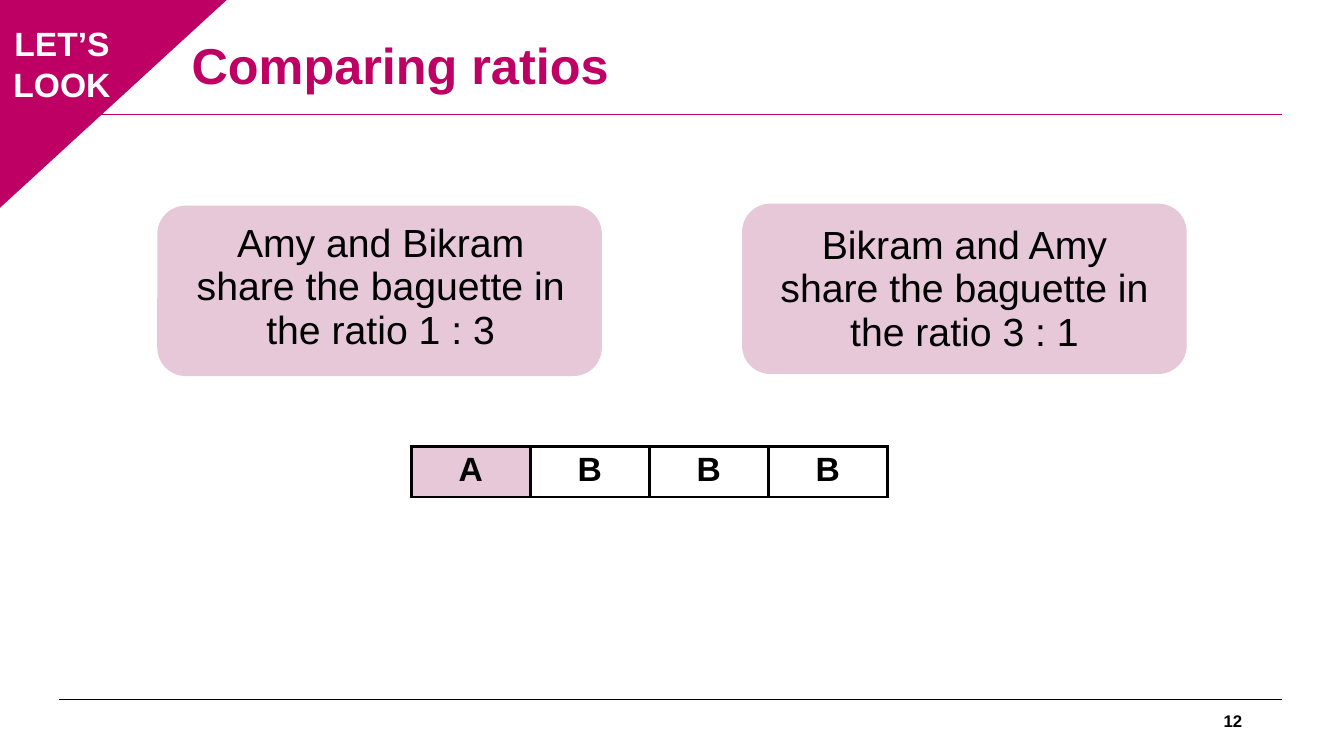
from lxml import etree
from pptx import Presentation
from pptx.dml.color import RGBColor
from pptx.enum.shapes import MSO_CONNECTOR, MSO_SHAPE
from pptx.enum.text import MSO_ANCHOR, PP_ALIGN
from pptx.oxml.ns import qn
from pptx.util import Pt

LEFT, CENTER, RIGHT = PP_ALIGN.LEFT, PP_ALIGN.CENTER, PP_ALIGN.RIGHT
TOP, MIDDLE = MSO_ANCHOR.TOP, MSO_ANCHOR.MIDDLE
ROUNDED, TRIANGLE = MSO_SHAPE.ROUNDED_RECTANGLE, MSO_SHAPE.ISOSCELES_TRIANGLE
STRAIGHT = MSO_CONNECTOR.STRAIGHT

# Content: lengths in px, 100 px to the inch
PX = 9144
FONT = "Arial"
COLORS = {"magenta": "BE0064", "pink": "E6C8D9", "black": "000000", "white": "FFFFFF"}
TITLE = "Comparing ratios"
CORNER_LABEL = ["LET’S", "LOOK"]
PAGE_NUMBER = "12"
RULES = [(694, "black"), (114, "magenta")]
RULE_LEFT, RULE_RIGHT = 59, 1272
# Card text, card left and top, text left and top
CARDS = [
    ("Bikram and Amy share the baguette in the ratio 3 : 1", (736, 202), (757, 217)),
    ("Amy and Bikram share the baguette in the ratio 1 : 3", (156, 204), (178, 215)),
]
CARD_SIZE = (441, 169)
CARD_TEXT_SIZE = (399, 150)
BAR_PARTS = ["A", "B", "B", "B"]
BAR_LEFT, BAR_TOP, PART_WIDTH, BAR_HEIGHT = 408, 443, 118, 47


def px(*lengths):
    return [length * PX for length in lengths]


def color(name):
    return RGBColor.from_string(COLORS[name])


def write(frame, lines, size, color_name, bold=False, align=CENTER, spacing=None, anchor=TOP):
    frame.word_wrap = True
    frame.vertical_anchor = anchor
    for index, line in enumerate(lines):
        paragraph = frame.add_paragraph() if index else frame.paragraphs[0]
        paragraph.alignment = align
        if spacing:
            paragraph.line_spacing = spacing
        run = paragraph.add_run()
        run.text = line
        run.font.name = FONT
        run.font.size = Pt(size)
        run.font.bold = bold
        run.font.color.rgb = color(color_name)


def add_text(slide, box, lines, size, color_name, **style):
    write(slide.shapes.add_textbox(*px(*box)).text_frame, lines, size, color_name, **style)


def add_filled(slide, kind, box, fill_name):
    shape = slide.shapes.add_shape(kind, *px(*box))
    shape.shadow.inherit = False
    shape.fill.solid()
    shape.fill.fore_color.rgb = color(fill_name)
    shape.line.fill.background()
    return shape


def add_borders(cell, width, color_name):
    properties = cell._tc.get_or_add_tcPr()
    for side in ("a:lnL", "a:lnR", "a:lnT", "a:lnB"):
        line = etree.SubElement(properties, qn(side), w=str(Pt(width)))
        fill = etree.SubElement(line, qn("a:solidFill"))
        etree.SubElement(fill, qn("a:srgbClr"), val=COLORS[color_name])


def main():
    presentation = Presentation()
    presentation.slide_width, presentation.slide_height = px(1333, 750)
    slide = presentation.slides.add_slide(presentation.slide_layouts[5])

    # Rules under the title and above the page number
    for y, color_name in RULES:
        rule = slide.shapes.add_connector(STRAIGHT, *px(RULE_LEFT, y, RULE_RIGHT, y))
        rule.line.color.rgb = color(color_name)
        rule.line.width = Pt(0.75)
        etree.SubElement(rule._element.spPr, qn("a:effectLst"))

    # Ratio cards
    for text, card_at, text_at in CARDS:
        add_filled(slide, ROUNDED, card_at + CARD_SIZE, "pink")
        add_text(slide, text_at + CARD_TEXT_SIZE, [text], 28, "black", spacing=Pt(31))

    # Corner flag
    corner = add_filled(slide, TRIANGLE, (-3, -2, 229, 210), "magenta")
    corner.adjustments[0] = 0
    corner._element.spPr.find(qn("a:xfrm")).set("flipV", "1")
    corner.line.color.rgb = color("magenta")
    corner.line.width = Pt(1)
    add_text(slide, (-2, 18, 127, 91), CORNER_LABEL, 24, "white", bold=True)

    # Page number
    add_text(slide, (942, 695, 300, 40), [PAGE_NUMBER], 12, "black",
             bold=True, align=RIGHT, anchor=MIDDLE)

    # Title
    title = slide.shapes.title
    title.left, title.top, title.width, title.height = px(180, 12, 869, 111)
    write(title.text_frame, [TITLE], 36, "magenta",
          bold=True, align=LEFT, spacing=0.9, anchor=MIDDLE)

    # Bar model
    bar_width = PART_WIDTH * len(BAR_PARTS)
    table = slide.shapes.add_table(
        1, len(BAR_PARTS), *px(BAR_LEFT, BAR_TOP, bar_width, BAR_HEIGHT)).table
    table.first_row = table.horz_banding = False
    for cell, part in zip(table.rows[0].cells, BAR_PARTS):
        add_borders(cell, 2.25, "black")
        cell.fill.solid()
        cell.fill.fore_color.rgb = color("pink" if part == "A" else "white")
        write(cell.text_frame, [part], 24, "black", bold=True)

    presentation.save("out.pptx")


if __name__ == "__main__":
    main()
